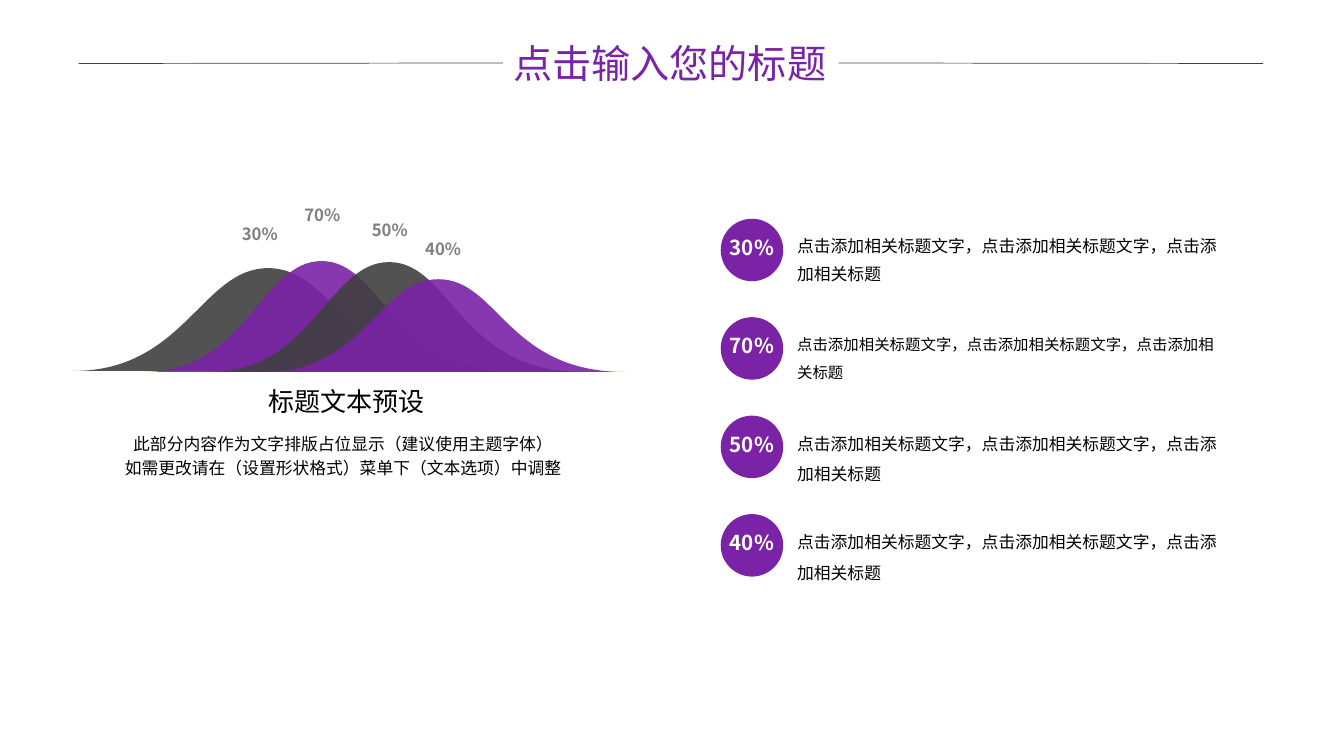
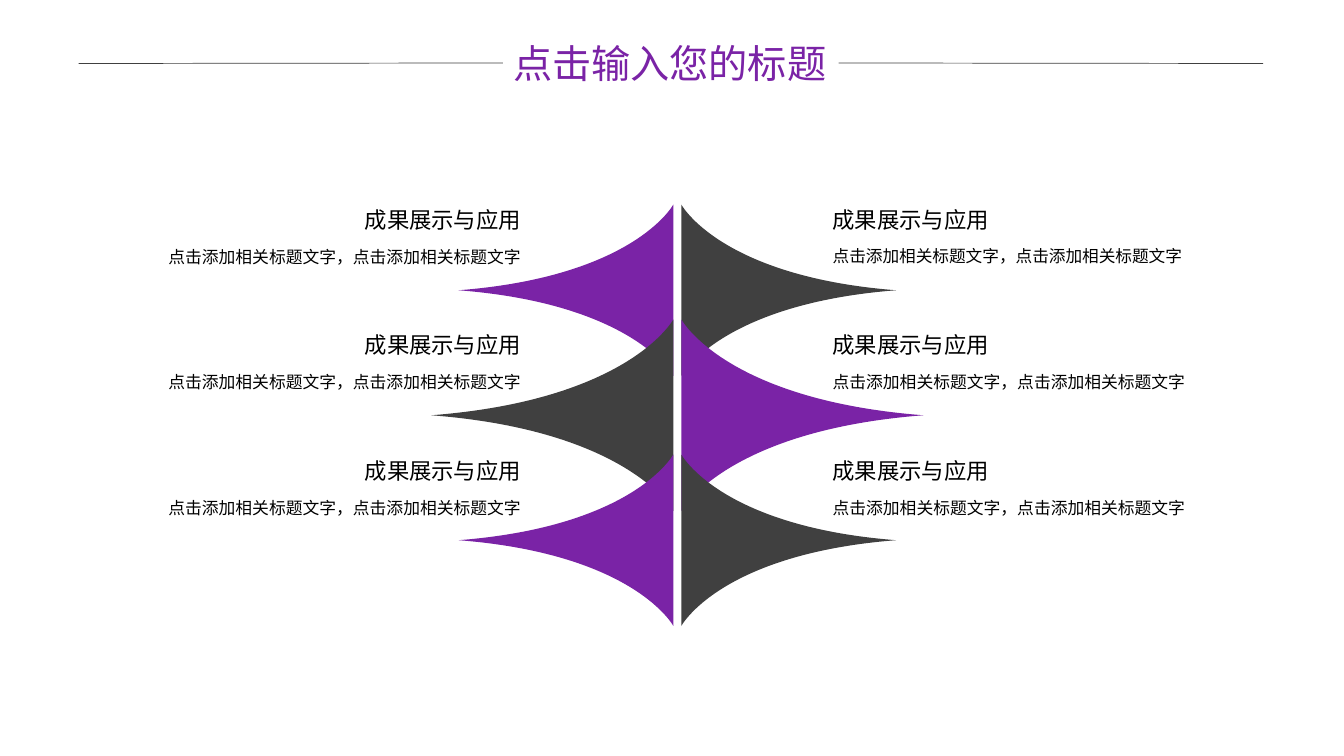
from dataclasses import dataclass

from lxml.etree import SubElement
from pptx import Presentation
from pptx.dml.color import RGBColor as RGB
from pptx.enum.shapes import MSO_CONNECTOR as LINK, MSO_SHAPE as SHAPE
from pptx.enum.text import MSO_ANCHOR as ANCHOR, MSO_AUTO_SIZE as AUTO, PP_ALIGN as ALIGN
from pptx.oxml.ns import qn
from pptx.util import Inches, Pt


@dataclass(frozen=True)
class Theme:
    font: str = "Noto Sans CJK SC"
    purple: str = "7A23A6"
    dark: str = "404040"
    gray: str = "808080"
    black: str = "000000"
    white: str = "FFFFFF"
    title: float = 28
    head: float = 18.6
    item: float = 16
    badge: float = 14.7
    body: float = 12
    tight: float = 11.9
    small: float = 11


THEME = Theme()


def write(frame, text, size=THEME.body, color=THEME.black, bold=False, align=ALIGN.LEFT,
          space=None, anchor=ANCHOR.TOP, inset=(0.1, 0.05, 0.1, 0.05), wrap=True):
    frame.auto_size = AUTO.NONE
    frame.word_wrap = wrap
    frame.vertical_anchor = anchor
    (frame.margin_left, frame.margin_top,
     frame.margin_right, frame.margin_bottom) = map(Inches, inset)
    frame.text = text
    for para in frame.paragraphs:
        para.alignment = align
        if space:
            para.line_spacing = space
        for run in para.runs:
            font = run.font
            font.size, font.bold, font.name = Pt(size), bold, THEME.font
            font.color.rgb = RGB.from_string(color)
            SubElement(run._r.get_or_add_rPr(), qn("a:ea"), typeface=THEME.font)


class Deck:
    def __init__(self, theme):
        self.theme = theme
        self.show = Presentation()
        self.show.slide_width, self.show.slide_height = Inches(40 / 3), Inches(7.5)
        self.slide = None

    def page(self, title):
        self.slide = self.show.slides.add_slide(self.show.slide_layouts[5])
        box = self.slide.shapes.title
        box.left, box.top, box.width, box.height = map(Inches, (4.99, 0.34, 3.33, 0.57))
        write(box.text_frame, title, size=self.theme.title, color=self.theme.purple,
              anchor=ANCHOR.MIDDLE)
        self.rule(0.78, 4.99, 0.63).end_connect(box, 1)
        self.rule(8.32, 12.53, 0.63).begin_connect(box, 3)

    def rule(self, start, end, y):
        line = self.slide.shapes.add_connector(
            LINK.STRAIGHT, Inches(start), Inches(y), Inches(end), Inches(y))
        line.line.color.rgb = RGB.from_string(self.theme.dark)
        line.line.width = Pt(0.5)
        SubElement(line._element.spPr, qn("a:effectLst"))
        return line

    def text(self, x, y, w, h, text, **style):
        box = self.slide.shapes.add_textbox(*map(Inches, (x, y, w, h)))
        write(box.text_frame, text, **style)

    def paint(self, shape, color, alpha=None):
        shape.shadow.inherit = False
        shape.fill.solid()
        shape.fill.fore_color.rgb = RGB.from_string(color)
        shape.line.fill.background()
        if alpha:
            tint = shape._element.spPr.find(qn("a:solidFill"))[0]
            SubElement(tint, qn("a:alpha"), val=str(alpha * 1000))

    def badge(self, x, y, size, text):
        disc = self.slide.shapes.add_shape(SHAPE.OVAL, *map(Inches, (x, y, size, size)))
        self.paint(disc, self.theme.purple)
        write(disc.text_frame, text, size=self.theme.badge, color=self.theme.white, bold=True,
              align=ALIGN.CENTER, anchor=ANCHOR.MIDDLE, inset=(0, 0, 0, 0.06), wrap=False)

    def curves(self, points, color, alpha=None):
        spots = [(Inches(x), Inches(y)) for x, y in points]
        pen = self.slide.shapes.build_freeform(*spots[0])
        pen.add_line_segments(spots[1:] + spots[:1], close=True)
        shape = pen.convert_to_shape()
        route = next(shape._element.iter(qn("a:path")))
        lines = route.findall(qn("a:lnTo"))
        for first in range(0, len(points) - 1, 3):
            bend = SubElement(route, qn("a:cubicBezTo"))
            lines[first].addprevious(bend)
            for line in lines[first:first + 3]:
                bend.append(line[0])
                route.remove(line)
        self.paint(shape, color, alpha)

    def hill(self, left, peak, right, top, base, color):
        rise, fall = peak - left, right - peak
        self.curves([(left, base), (left + 0.57 * rise, base), (left + 0.66 * rise, top),
                     (peak, top), (peak + 0.32 * fall, top), (peak + 0.37 * fall, base),
                     (right, base)], color, alpha=90)

    def wedge(self, x, y, reach, half, color):
        bend, dip = x + 0.18 * reach, 0.16 * half
        top, low = (x, y - half), (x, y + half)
        self.curves([top, top, (bend, y - dip), (x + reach, y), (bend, y + dip), low, low],
                    color)


def hills(deck):
    theme = deck.theme
    deck.page("点击输入您的标题")
    phrase = "点击添加相关标题文字，点击添加相关标题文字，点击添加相关标题"
    rows = [("30%", theme.body, 1.43), ("70%", theme.small, 1.53),
            ("50%", theme.body, 1.5), ("40%", theme.body, 1.5)]
    pitch = 2.93 / 3
    for row, (share, size, space) in enumerate(rows):
        y = 2.17 + pitch * row
        deck.text(7.81, y + 0.03, 4.48, 0.69, phrase, size=size, space=space)
        deck.badge(7.15, y, 0.62, share)

    deck.text(0.45, 4.21, 5.91, 0.58,
              "此部分内容作为文字排版占位显示（建议使用主题字体）\v"
              "如需更改请在（设置形状格式）菜单下（文本选项）中调整",
              align=ALIGN.CENTER, space=1.2)
    deck.text(2.58, 3.78, 1.72, 0.4, "标题文本预设", size=theme.head,
              align=ALIGN.CENTER, wrap=False)
    peaks = [(0.73, 2.66, 4.74, 2.66, 3.68, theme.dark),
             (1.44, 3.19, 5.08, 2.59, 3.69, theme.purple),
             (2.09, 3.86, 5.77, 2.6, 3.69, theme.dark),
             (2.63, 4.35, 6.2, 2.77, 3.69, theme.purple)]
    for peak in peaks:
        deck.hill(*peak)
    spots = [(2.3, 2.17), (2.92, 1.98), (3.59, 2.13), (4.12, 2.32)]
    for (x, y), (share, *_) in zip(spots, rows):
        deck.text(x, y, 0.58, 0.33, share, color=theme.gray, bold=True, wrap=False)


def wedges(deck):
    theme = deck.theme
    deck.page("点击输入您的标题")
    plain, close = (theme.body, 1.2), (theme.tight, 1.1)
    sides = [(6.68, -1, 0.97, ALIGN.RIGHT, (theme.purple, theme.dark), (plain, plain, plain)),
             (6.76, 1, 7.74, ALIGN.LEFT, (theme.dark, theme.purple), (close, plain, plain))]
    sizes = [(2.13, 0.85), (2.4, 0.95), (2.13, 0.85)]
    for axis, way, _, _, tones, _ in sides:
        for row, (reach, half) in enumerate(sizes):
            deck.wedge(axis, 2.88 + 1.24 * row, way * reach, half, tones[row % 2])
    for _, _, left, align, _, forms in sides:
        style = dict(align=align, anchor=ANCHOR.MIDDLE, inset=(0.52, 0, 0.42, 0))
        for y, (size, space) in zip((2.02, 3.26, 4.51), forms):
            deck.text(left, y, 4.62, 0.32, "成果展示与应用", size=theme.item, **style)
            deck.text(left, y + 0.32, 4.62, 0.38, "点击添加相关标题文字，点击添加相关标题文字",
                      size=size, space=space, **style)


def main():
    deck = Deck(THEME)
    hills(deck)
    wedges(deck)
    deck.show.save("out.pptx")


if __name__ == "__main__":
    main()
